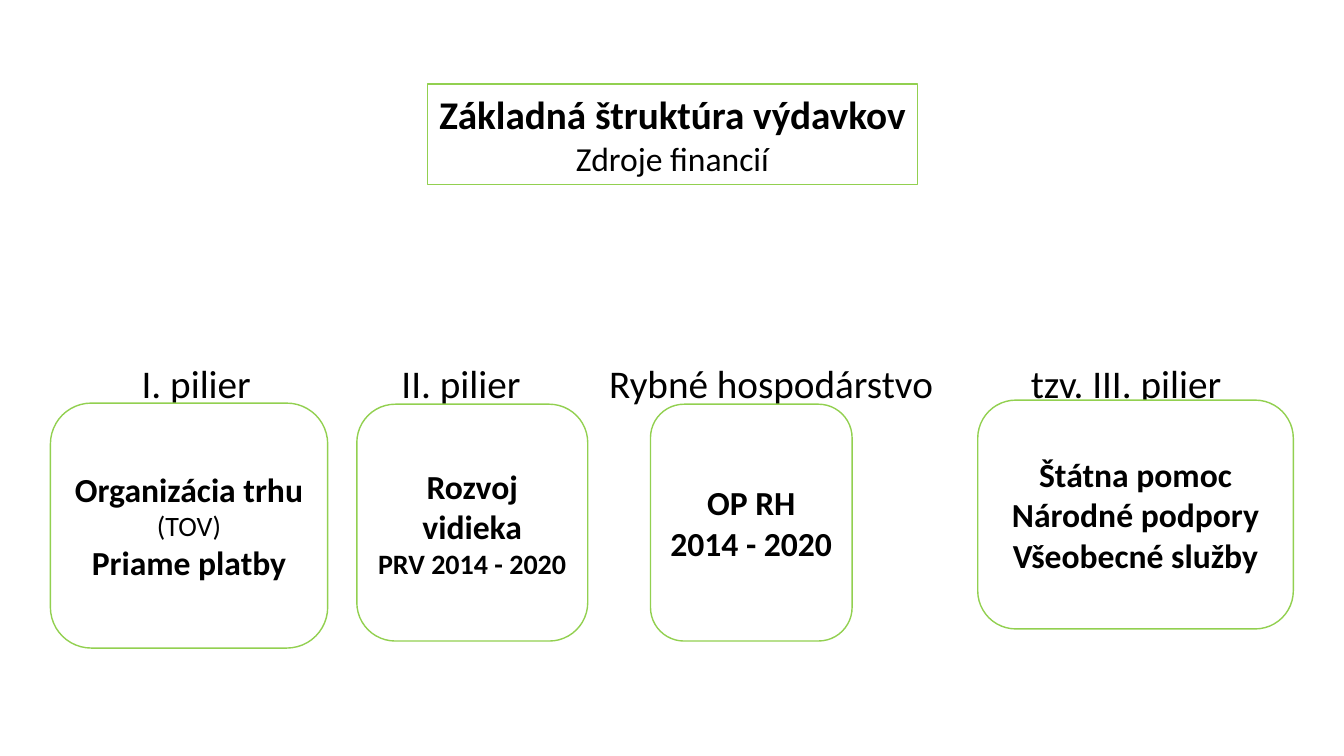
from pptx import Presentation
from pptx.dml.color import RGBColor
from pptx.enum.shapes import MSO_SHAPE
from pptx.enum.text import MSO_ANCHOR, MSO_AUTO_SIZE, PP_ALIGN
from pptx.util import Inches, Pt

WIDE, HIGH = Inches(13.33), Inches(7.5)
GREEN = RGBColor(0x92, 0xD0, 0x50)
WHITE = RGBColor(0xFF, 0xFF, 0xFF)
BLACK = RGBColor(0, 0, 0)
FONT = "Calibri"

# Each line of text: words, size in points, bold
TITLE = [("Základná štruktúra výdavkov", 28, True), ("Zdroje financií", 24, False)]

# Label, label centre, box (left, top, width, height), lines; all in % of the slide
PILLARS = [
    ("I. pilier", 14.6, (3.75, 53.33, 20.63, 32.4),
     [("Organizácia trhu", 24, True), ("(TOV)", 20, False), ("Priame platby", 24, True)]),
    ("II. pilier", 34.3, (26.55, 53.47, 17.18, 31.33),
     [("Rozvoj vidieka", 24, True), ("PRV 2014 - 2020", 20, True)]),
    ("Rybné hospodárstvo", 57.37, (48.4, 53.47, 15, 31.33),
     [("OP RH 2014 - 2020", 24, True)]),
    ("tzv. III. pilier", 83.78, (72.75, 52.93, 23.48, 30.27),
     [("Štátna pomoc", 24, True), ("Národné podpory", 24, True),
      ("Všeobecné služby", 24, True)]),
]
LABEL_TOP, LABEL_WIDE, LABEL_HIGH = 47.47, 26, 6.3


def area(left, top, wide, high):
    """Turn percentages of the slide into lengths."""
    return (int(WIDE * left / 100), int(HIGH * top / 100),
            int(WIDE * wide / 100), int(HIGH * high / 100))


def write(shape, lines):
    frame = shape.text_frame
    frame.word_wrap = True
    frame.auto_size = MSO_AUTO_SIZE.NONE
    frame.vertical_anchor = MSO_ANCHOR.MIDDLE
    for i, (words, size, bold) in enumerate(lines):
        para = frame.add_paragraph() if i else frame.paragraphs[0]
        para.alignment = PP_ALIGN.CENTER
        para.space_before = Pt(0)
        run = para.add_run()
        run.text = words
        font = run.font
        font.name, font.size, font.bold = FONT, Pt(size), bold
        font.color.rgb = BLACK


def frame_in(shape):
    """Give a shape the white fill and thin green outline."""
    shape.fill.solid()
    shape.fill.fore_color.rgb = WHITE
    shape.line.color.rgb = GREEN
    shape.line.width = Pt(1)


def add_title(slide):
    title = slide.shapes.title
    title.left, title.top, title.width, title.height = area(31.8, 11.1, 36.46, 13.33)
    frame_in(title)
    write(title, TITLE)


def add_label(slide, words, mid):
    label = slide.shapes.add_textbox(
        *area(mid - LABEL_WIDE / 2, LABEL_TOP, LABEL_WIDE, LABEL_HIGH))
    write(label, [(words, 28, False)])
    label.text_frame.margin_top = label.text_frame.margin_bottom = 0


def add_box(slide, place, lines):
    box = slide.shapes.add_shape(MSO_SHAPE.FLOWCHART_ALTERNATE_PROCESS, *area(*place))
    box.shadow.inherit = False
    frame_in(box)
    write(box, lines)


def main():
    deck = Presentation()
    deck.slide_width, deck.slide_height = WIDE, HIGH
    slide = deck.slides.add_slide(deck.slide_layouts.get_by_name("Title Only"))
    add_title(slide)
    for label, mid, place, lines in PILLARS:
        add_label(slide, label, mid)
        add_box(slide, place, lines)
    deck.save("out.pptx")


if __name__ == "__main__":
    main()
